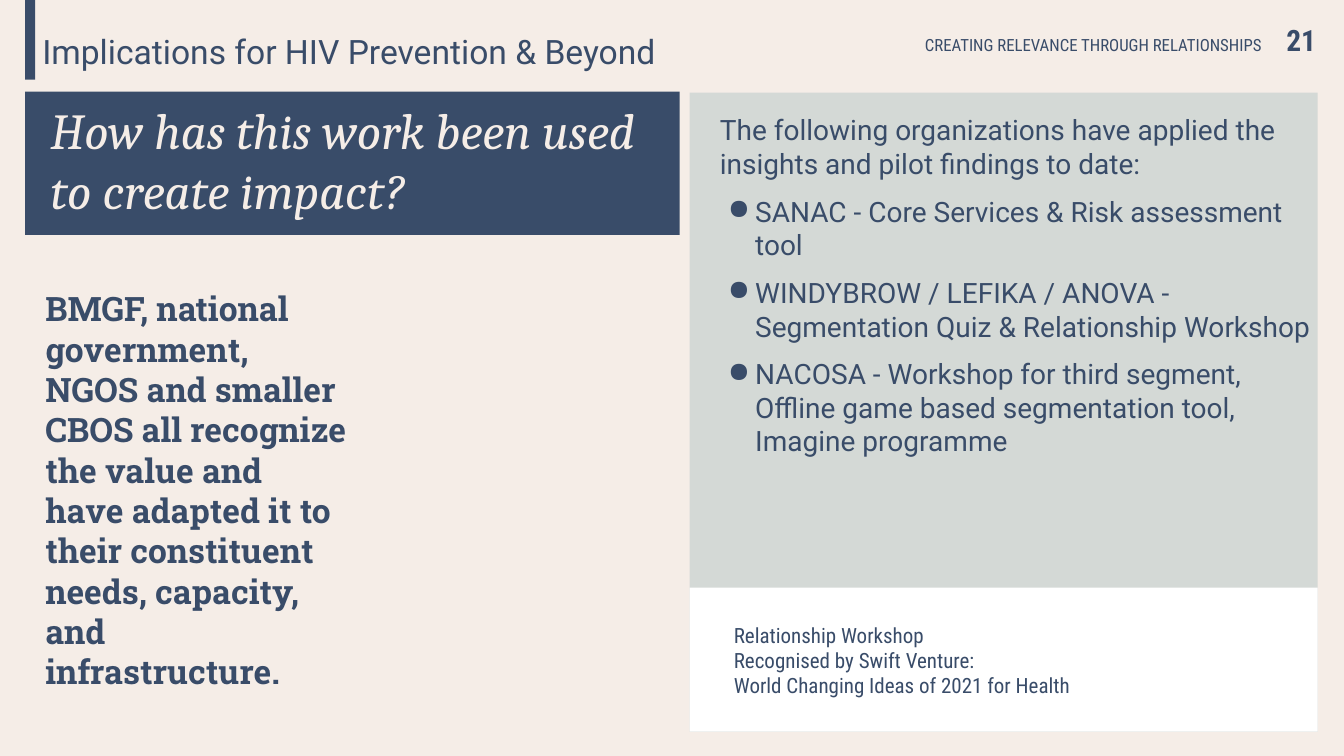
from lxml.etree import SubElement
from pptx import Presentation
from pptx.dml.color import RGBColor
from pptx.enum.shapes import MSO_SHAPE
from pptx.enum.text import MSO_ANCHOR
from pptx.oxml.ns import qn
from pptx.util import Inches, Pt

NAVY = RGBColor(0x39, 0x4C, 0x69)
CREAM = RGBColor(0xF5, 0xED, 0xE7)
SAGE = RGBColor(0xD4, 0xD9, 0xD6)
WHITE = RGBColor(0xFF, 0xFF, 0xFF)

LEFT, RIGHT = 0.25, 6.84
ORGANIZATIONS = [
    "SANAC - Core Services & Risk assessment tool",
    "WINDYBROW / LEFIKA / ANOVA - Segmentation Quiz & Relationship Workshop",
    "NACOSA - Workshop for third segment, Offline game based segmentation tool, "
    "Imagine programme",
]
RECOGNITION = [
    "Relationship Workshop",
    "Recognised by Swift Venture:",
    "World Changing Ideas of 2021 for Health",
]


def add_block(slide, box, color):
    block = slide.shapes.add_shape(MSO_SHAPE.RECTANGLE, *map(Inches, box))
    block.shadow.inherit = False
    block.fill.solid()
    block.fill.fore_color.rgb = color
    block.line.fill.background()


def add_frame(slide, box, insets, anchor=MSO_ANCHOR.TOP):
    """Add a wrapping text box; insets are left, top, right, bottom."""
    frame = slide.shapes.add_textbox(*map(Inches, box)).text_frame
    frame.word_wrap = True
    frame.vertical_anchor = anchor
    (frame.margin_left, frame.margin_top,
     frame.margin_right, frame.margin_bottom) = map(Inches, insets)
    return frame


def add_run(paragraph, text, font, size, color=NAVY, bold=False, italic=False):
    run = paragraph.add_run()
    run.text = text
    run.font.name = font
    run.font.size = Pt(size)
    run.font.color.rgb = color
    run.font.bold = bold
    run.font.italic = italic


def set_bullet(paragraph):
    props = paragraph._p.get_or_add_pPr()
    props.set("marL", str(Inches(0.35)))
    props.set("indent", str(Inches(-0.27)))
    bullet_color = SubElement(props, qn("a:buClr"))
    SubElement(bullet_color, qn("a:srgbClr"), val=str(NAVY))
    SubElement(props, qn("a:buChar"), char="●")


def set_tabs(paragraph, stops):
    tabs = SubElement(paragraph._p.get_or_add_pPr(), qn("a:tabLst"))
    for position, align in stops:
        SubElement(tabs, qn("a:tab"), pos=str(Inches(position)), algn=align)


def add_header(slide, left, top):
    add_block(slide, (left, top, 0.1, 0.79), NAVY)
    title = add_frame(slide, (left + 0.17, top + 0.31, 6.33, 0.61), (0, 0, 0, 0))
    add_run(title.paragraphs[0], "Implications for HIV Prevention & Beyond", "Roboto", 24)

    running_head = add_frame(slide, (RIGHT, top + 0.18, 6.4, 0.43),
                             (0.1, 0.1, 0, 0.1), MSO_ANCHOR.MIDDLE).paragraphs[0]
    set_tabs(running_head, [(5.58, "r"), (5.82, "l")])
    add_run(running_head, "\tCREATING RELEVANCE THROUGH RELATIONSHIPS\t",
            "Roboto Condensed", 12)
    add_run(running_head, "21", "Roboto Condensed", 21, bold=True)


def add_question_column(slide, left, top, width):
    add_block(slide, (left, top, width, 1.42), NAVY)
    question = add_frame(slide, (left, top - 0.03, width, 1.94), (0.25, 0.1, 0, 0))
    add_run(question.paragraphs[0], "How has this work been used to create impact?",
            "Cambria", 36, CREAM, italic=True)

    answer = add_frame(slide, (left, top + 1.85, 3.2, 4.49), (0.2, 0.1, 0, 0))
    add_run(answer.paragraphs[0],
            "BMGF, national government, NGOS and smaller CBOS all recognize the value "
            "and have adapted it to their constituent needs, capacity, and infrastructure.",
            "Roboto Slab", 24, bold=True)


def add_organizations_panel(slide, left, top, width, height):
    footer_height = 1.43
    footer_top = top + height - footer_height
    add_block(slide, (left, top, width, height), SAGE)
    add_block(slide, (left, footer_top, width, footer_height), WHITE)

    applied = add_frame(slide, (left, top, width, 3.81), (0.3, 0.2, 0, 0))
    add_run(applied.paragraphs[0],
            "The following organizations have applied the insights and pilot findings "
            "to date:", "Roboto", 20)
    for organization in ORGANIZATIONS:
        entry = applied.add_paragraph()
        entry.space_before = Pt(10)
        set_bullet(entry)
        add_run(entry, organization, "Roboto", 20)

    recognition = add_frame(slide, (left + 0.34, footer_top + 0.17, 4.35, 1.1),
                            (0.1, 0.1, 0.1, 0.1), MSO_ANCHOR.MIDDLE)
    for index, line in enumerate(RECOGNITION):
        entry = recognition.add_paragraph() if index else recognition.paragraphs[0]
        add_run(entry, line, "Roboto Condensed", 15)


def main():
    deck = Presentation()
    deck.slide_width, deck.slide_height = Inches(13.33), Inches(7.5)
    slide = deck.slides.add_slide(deck.slide_layouts[6])
    slide.background.fill.solid()
    slide.background.fill.fore_color.rgb = CREAM
    add_header(slide, LEFT, 0)
    add_question_column(slide, LEFT, 0.91, 6.49)
    add_organizations_panel(slide, RIGHT, 0.92, 6.23, 6.34)
    deck.save("out.pptx")


if __name__ == "__main__":
    main()
